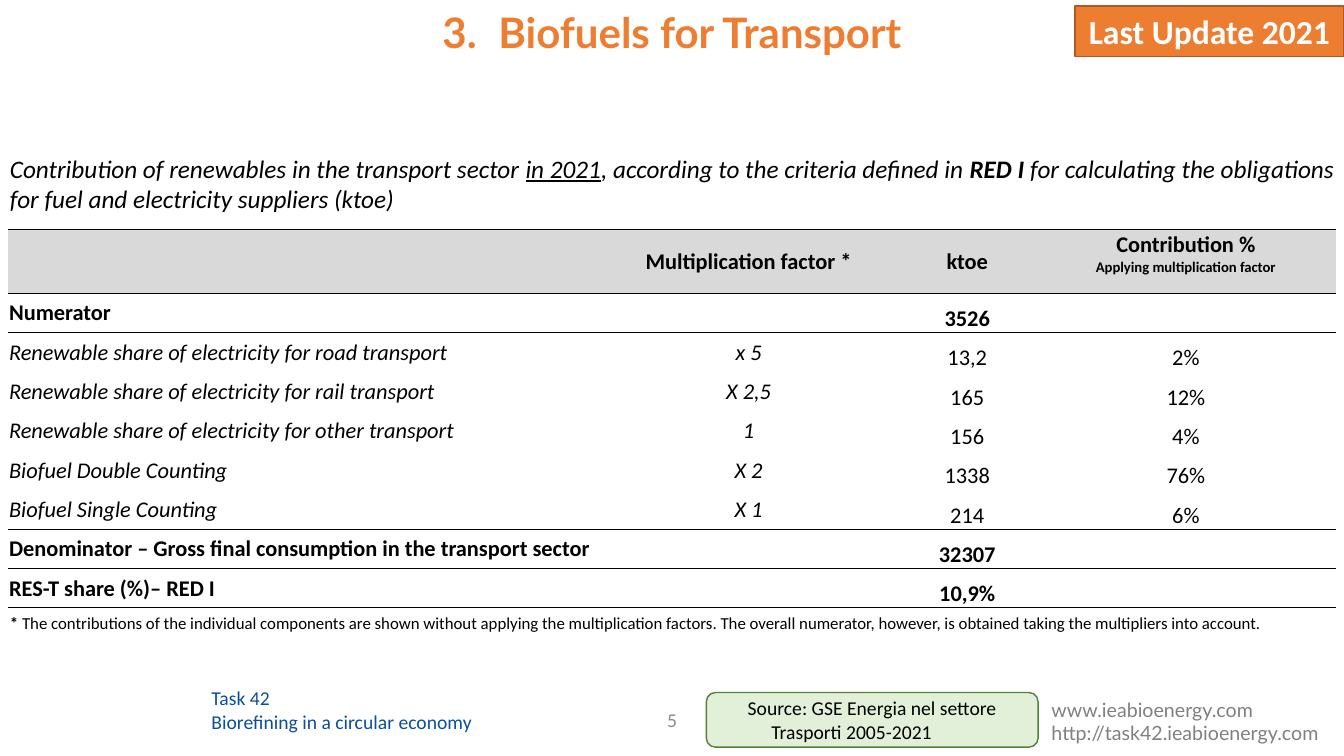
from lxml import etree
from pptx import Presentation
from pptx.dml.color import RGBColor
from pptx.enum.shapes import MSO_SHAPE
from pptx.enum.text import MSO_ANCHOR, PP_ALIGN
from pptx.oxml.ns import qn
from pptx.util import Pt

RECT, ROUND_RECT = MSO_SHAPE.RECTANGLE, MSO_SHAPE.ROUNDED_RECTANGLE
TOP, MIDDLE, BOTTOM = MSO_ANCHOR.TOP, MSO_ANCHOR.MIDDLE, MSO_ANCHOR.BOTTOM
LEFT, CENTER, JUSTIFY = PP_ALIGN.LEFT, PP_ALIGN.CENTER, PP_ALIGN.JUSTIFY

BLACK, WHITE, ORANGE = "000000", "FFFFFF", "ED7D31"
COLUMN_WIDTHS = [422, 213.8, 98.6, 213.8]
HEADER_HEIGHT, ROW_HEIGHT = 45.2, 28.1
RULED_EDGES = {0, 1, 2, 7, 8, 9}  # row edges that carry a line
TOTAL_ROWS = {1, 7, 8}
HEADERS = ["", "Multiplication factor *", "ktoe", "Contribution %"]
ENERGY_ROWS = [
    ["Numerator", "", "3526", ""],
    ["Renewable share of electricity for road transport", "x 5", "13,2", "2%"],
    ["Renewable share of electricity for rail transport", "X 2,5", "165", "12%"],
    ["Renewable share of electricity for other transport", "1", "156", "4%"],
    ["Biofuel Double Counting", "X 2", "1338", "76%"],
    ["Biofuel Single Counting", "X 1", "214", "6%"],
    ["Denominator – Gross final consumption in the transport sector", "", "32307", ""],
    ["RES-T share (%)– RED I", "", "10,9%", ""],
]


def color(hex_code):
    return RGBColor.from_string(hex_code)


def add_run(paragraph, text, size, ink=BLACK, face="Calibri",
            bold=False, italic=False, underline=False):
    run = paragraph.add_run()
    run.text = text
    font = run.font
    font.size, font.name = Pt(size), face
    font.bold, font.italic, font.underline = bold, italic, underline
    font.color.rgb = color(ink)


def add_text_box(slide, box, align=LEFT, anchor=TOP):
    """Return the first paragraph of a new wrapping text box."""
    frame = slide.shapes.add_textbox(*map(Pt, box)).text_frame
    frame.word_wrap = True
    frame.vertical_anchor = anchor
    paragraph = frame.paragraphs[0]
    paragraph.alignment = align
    return paragraph


def add_label(slide, box, kind, fill, line, anchor):
    """Return the first paragraph of a filled, outlined shape."""
    label = slide.shapes.add_shape(kind, *map(Pt, box))
    label.shadow.inherit = False
    label.fill.solid()
    label.fill.fore_color.rgb = color(fill)
    label.line.color.rgb = color(line)
    label.line.width = Pt(1)
    label.text_frame.word_wrap = True
    label.text_frame.vertical_anchor = anchor
    paragraph = label.text_frame.paragraphs[0]
    paragraph.alignment = CENTER
    return paragraph


def add_heading(slide, box):
    left, top, width, height = box
    # Numbered title
    title = add_text_box(slide, box, CENTER)
    title.line_spacing = Pt(32.5)
    properties = title._p.get_or_add_pPr()
    properties.set("marL", str(Pt(40)))
    properties.set("indent", str(Pt(-40)))
    etree.SubElement(properties, qn("a:buFont"), typeface="+mj-lt")
    etree.SubElement(properties, qn("a:buAutoNum"), type="arabicPeriod", startAt="3")
    add_run(title, "Biofuels for Transport", 30, ORANGE, "Lato", bold=True)

    # Update badge in the right corner
    badge_width = 192.2
    badge = add_label(slide, (left + width - badge_width, top, badge_width, 36),
                      RECT, ORANGE, "AF5C24", TOP)
    add_run(badge, "Last Update 2021", 24, WHITE, bold=True)


def add_caption(slide, box):
    caption = add_text_box(slide, box, JUSTIFY)
    for text, style in [
        ("Contribution of renewables in the transport sector ", {}),
        ("in 2021", {"underline": True}),
        (", according to the criteria defined in ", {}),
        ("RED I ", {"bold": True}),
        ("for calculating the obligations for fuel and electricity suppliers (ktoe)", {}),
    ]:
        add_run(caption, text, 18, italic=True, **style)


def set_borders(cell, row):
    properties = cell._tc.get_or_add_tcPr()
    ruled = {"a:lnL": False, "a:lnR": False,
             "a:lnT": row in RULED_EDGES, "a:lnB": row + 1 in RULED_EDGES}
    for tag, visible in ruled.items():
        border = etree.SubElement(properties, qn(tag), w=str(Pt(1)))
        if visible:
            fill = etree.SubElement(border, qn("a:solidFill"))
            etree.SubElement(fill, qn("a:srgbClr"), val=BLACK)
        else:
            etree.SubElement(border, qn("a:noFill"))


def fill_cell(cell, text, row, column):
    set_borders(cell, row)
    cell.margin_left = cell.margin_right = cell.margin_top = Pt(0.7)
    cell.margin_bottom = 0
    header = row == 0
    if header:
        cell.fill.solid()
        cell.fill.fore_color.rgb = color("D9D9D9")
    else:
        cell.fill.background()
    cell.vertical_anchor = BOTTOM if column > 1 and not header else MIDDLE
    if text:
        bold = header or row in TOTAL_ROWS
        paragraph = cell.text_frame.paragraphs[0]
        paragraph.alignment = CENTER if column else LEFT
        add_run(paragraph, text, 16, bold=bold, italic=column < 2 and not bold)


def add_energy_table(slide, box):
    rows = [HEADERS] + ENERGY_ROWS
    table = slide.shapes.add_table(len(rows), len(HEADERS), *map(Pt, box)).table
    table.first_row = table.horz_banding = False
    for column, width in zip(table.columns, COLUMN_WIDTHS):
        column.width = Pt(width)
    for r, texts in enumerate(rows):
        table.rows[r].height = Pt(ROW_HEIGHT if r else HEADER_HEIGHT)
        for c, text in enumerate(texts):
            fill_cell(table.cell(r, c), text, r, c)

    # Second line of the last header
    contribution = table.cell(0, 3)
    contribution.vertical_anchor = TOP
    subtitle = contribution.text_frame.add_paragraph()
    subtitle.alignment = CENTER
    add_run(subtitle, "Applying multiplication factor", 10.5, bold=True)


def add_footnote(slide, box):
    footnote = add_text_box(slide, box)
    add_run(footnote, "*", 12, bold=True)
    add_run(footnote, " The contributions of the individual components are shown without "
            "applying the multiplication factors. The overall numerator, however, is "
            "obtained taking the multipliers into account.", 12)


def add_footer(slide, box):
    left, top, width, height = box
    # Task name
    task = add_text_box(slide, (left + 144, top, 216, height))
    add_run(task, "Task 42", 14, "0A4F9D")
    task.add_line_break()
    add_run(task, "Biorefining in a circular economy", 14, "0A4F9D")

    # Slide number
    number = add_text_box(slide, (left + 399, top + 13, 162, 28.8), CENTER, MIDDLE)
    add_run(number, "5", 14, "8C8C8C")

    # Data source
    source = add_label(slide, (left + 504.5, top + 8, 237, 39),
                       ROUND_RECT, "E2F0D9", "538035", MIDDLE)
    add_run(source, "Source: GSE Energia nel settore Trasporti 2005-2021\t", 14)

    # Web addresses
    addresses = add_text_box(slide, (left + width - 216, top + 8, 216, height))
    add_run(addresses, "www.ieabioenergy.com http://task42.ieabioenergy.com",
            14, "808080", "Lato")


def main():
    deck = Presentation()
    deck.slide_width, deck.slide_height = Pt(960), Pt(540)
    slide = deck.slides.add_slide(deck.slide_layouts[6])
    add_footer(slide, (0, 486.7, 960, 41))
    add_heading(slide, (0, 4.3, 960, 70))
    add_energy_table(slide, (5.8, 164.2, 948.2, 270))
    add_caption(slide, (0, 105.8, 960, 51))
    add_footnote(slide, (0, 434.2, 960, 21.6))
    deck.save("out.pptx")


if __name__ == "__main__":
    main()
